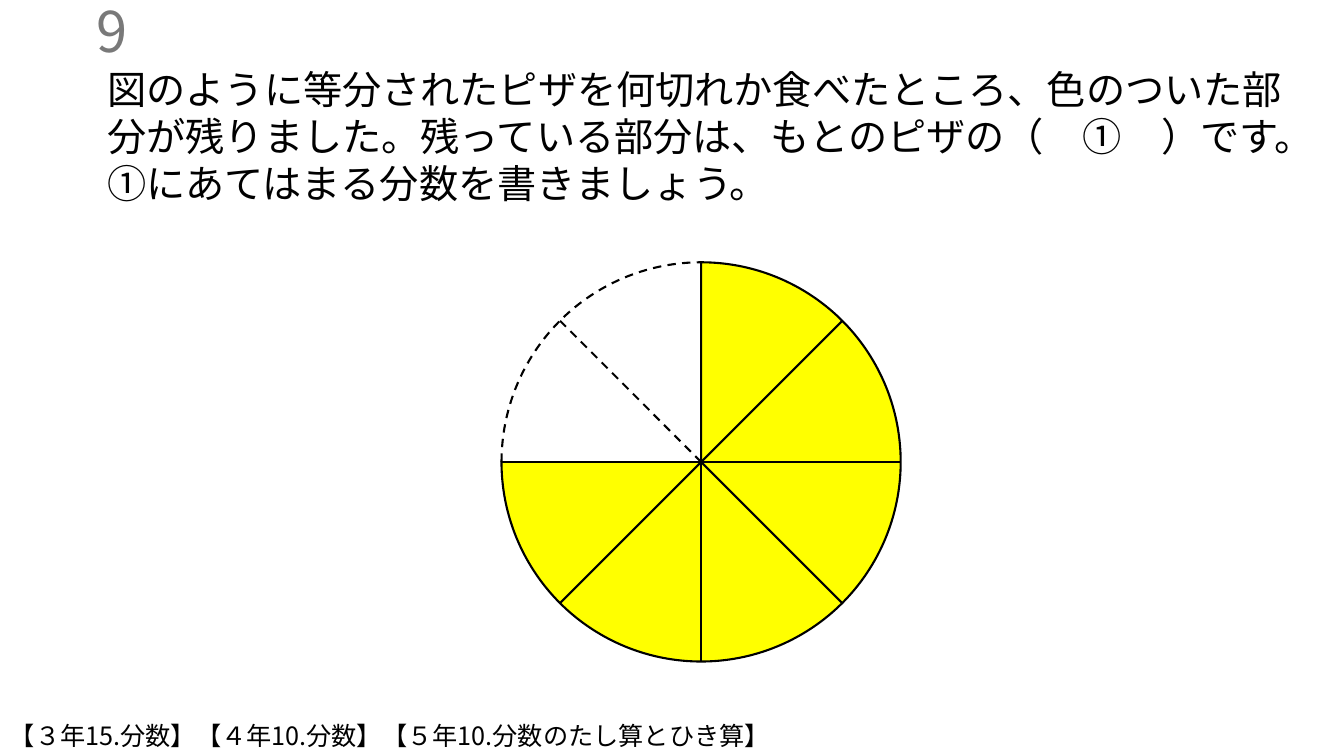
"""Build a worksheet slide asking which fraction of a pizza is left."""
import math

import pptx
import pptx.dml.color
import pptx.enum.dml
import pptx.enum.lang
import pptx.enum.shapes
import pptx.enum.text
import pptx.oxml.ns
import pptx.util
from lxml import etree

Cm, Pt = pptx.util.Cm, pptx.util.Pt
RGBColor = pptx.dml.color.RGBColor
Shapes = pptx.enum.shapes.MSO_SHAPE
Align = pptx.enum.text.PP_ALIGN
qn = pptx.oxml.ns.qn

FONT = "Noto Sans CJK JP"
BLACK = RGBColor(0x00, 0x00, 0x00)
GRAY = RGBColor(0x79, 0x79, 0x79)
YELLOW = RGBColor(0xFF, 0xFF, 0x00)
WHITE = RGBColor(0xFF, 0xFF, 0xFF)

NUMBER = "9"
QUESTION = [
    "図のように等分されたピザを何切れか食べたところ、色のついた部分が残りました。"
    "残っている部分は、もとのピザの（　①　）です。",
    "①にあてはまる分数を書きましょう。",
]
UNITS = ["【３年15.分数】【４年10.分数】【５年10.分数のたし算とひき算】"]

SLICE_COUNT = 8
EATEN_SLICES = (4, 5)
CENTER_X, CENTER_Y, RADIUS = 17.67, 11.64, 5.03

SLICE_ANGLE = 360 / SLICE_COUNT
EATEN_START = EATEN_SLICES[0] * SLICE_ANGLE
EATEN_END = (EATEN_SLICES[-1] + 1) * SLICE_ANGLE
ADJUSTMENT_PER_DEGREE = 0.6
LINE_HEIGHT = 1.2


def write(frame, lines, size, color, align=Align.LEFT):
    frame.word_wrap = True
    for index, line in enumerate(lines):
        paragraph = frame.add_paragraph() if index else frame.paragraphs[0]
        paragraph.alignment = align
        paragraph.line_spacing = Pt(size * LINE_HEIGHT)
        paragraph.space_before = Pt(0)
        run = paragraph.add_run()
        run.text = line
        run.font.size = Pt(size)
        run.font.name = FONT
        run.font.color.rgb = color
        run.font.language_id = pptx.enum.lang.MSO_LANGUAGE_ID.JAPANESE
        east_asian = etree.Element(qn("a:ea"), typeface=FONT)
        run.font._element.find(qn("a:latin")).addnext(east_asian)


def add_text(slide, left, top, width, height, lines, size):
    box = slide.shapes.add_textbox(Cm(left), Cm(top), Cm(width), Cm(height))
    write(box.text_frame, lines, size, BLACK)


def set_outline(line, dashed):
    line.color.rgb = BLACK
    line.width = Pt(1.5)
    if dashed:
        line.dash_style = pptx.enum.dml.MSO_LINE.DASH


def add_sector(slide, kind, start, end, color, dashed=False):
    sector = slide.shapes.add_shape(
        kind, Cm(CENTER_X - RADIUS), Cm(CENTER_Y - RADIUS),
        Cm(2 * RADIUS), Cm(2 * RADIUS))
    for index, angle in enumerate((start, end)):
        sector.adjustments[index] = angle * ADJUSTMENT_PER_DEGREE
    sector.shadow.inherit = False
    sector.fill.solid()
    sector.fill.fore_color.rgb = color
    set_outline(sector.line, dashed)


def point_at(angle, distance):
    turn = math.radians(angle)
    return (Cm(CENTER_X + distance * math.cos(turn)),
            Cm(CENTER_Y + distance * math.sin(turn)))


def add_cut(slide, angle, from_distance, to_distance, dashed=False):
    cut = slide.shapes.add_connector(
        pptx.enum.shapes.MSO_CONNECTOR.STRAIGHT,
        *point_at(angle, from_distance), *point_at(angle, to_distance))
    set_outline(cut.line, dashed)
    etree.SubElement(cut._element.spPr, qn("a:effectLst"))


def add_pizza(slide):
    add_sector(slide, Shapes.PIE, EATEN_END, EATEN_START, YELLOW)
    add_sector(slide, Shapes.ARC, EATEN_START, EATEN_END, WHITE, dashed=True)
    for index in range(SLICE_COUNT // 2):
        angle = index * SLICE_ANGLE
        if EATEN_START < angle + 180 < EATEN_END:
            add_cut(slide, angle, 0, RADIUS)
            add_cut(slide, angle, -RADIUS, 0, dashed=True)
        else:
            add_cut(slide, angle, -RADIUS, RADIUS)


def add_number(slide):
    number = slide.shapes.title
    number.left, number.top = Cm(-4.14), Cm(0.25)
    number.width, number.height = Cm(7.62), Cm(1.02)
    number.text_frame.vertical_anchor = pptx.enum.text.MSO_ANCHOR.MIDDLE
    number.text_frame.auto_size = pptx.enum.text.MSO_AUTO_SIZE.NONE
    write(number.text_frame, [NUMBER], 40, GRAY, Align.RIGHT)


def main():
    deck = pptx.Presentation()
    deck.slide_width, deck.slide_height = Cm(33.87), Cm(19.05)
    title_only = deck.slide_layouts.get_by_name("Title Only")
    slide = deck.slides.add_slide(title_only)
    add_number(slide)
    add_text(slide, 2.46, 1.52, 30.43, 3.84, QUESTION, 28)
    add_pizza(slide)
    add_text(slide, 0, 18.03, 24.43, 1.02, UNITS, 18)
    deck.save("out.pptx")


if __name__ == "__main__":
    main()
